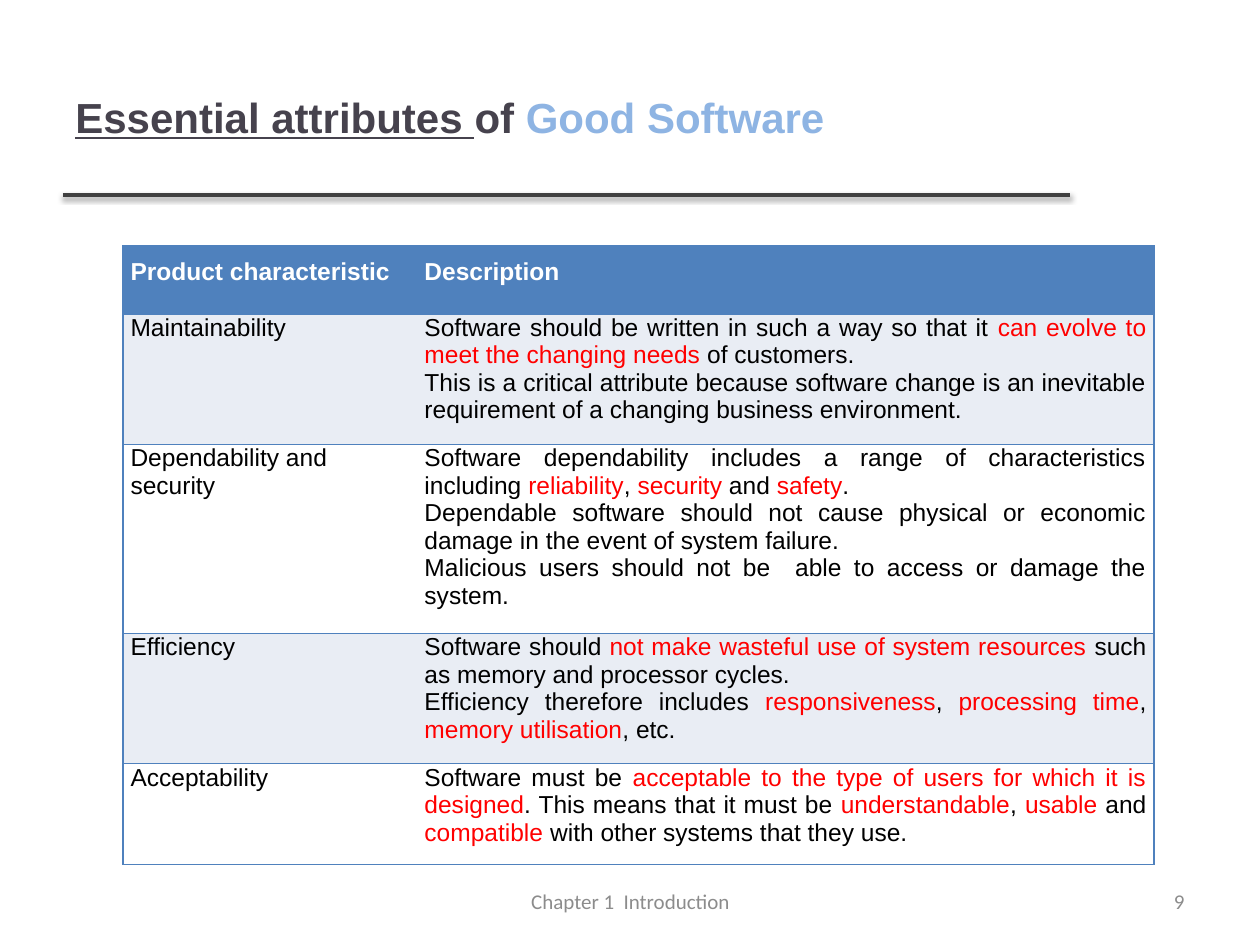
"""Build a slide that tabulates the essential attributes of good software."""
from dataclasses import dataclass

from lxml import etree
from pptx import Presentation, util as u
from pptx.dml.color import RGBColor
from pptx.enum import shapes, text
from pptx.oxml import ns

PX = 914400 // 126
BLUE, BAND, WHITE, BLACK, RED = "4F81BD", "E9EDF4", "FFFFFF", "000000", "FF0000"
INK, SKY, GREY, RULE = "46424D", "8EB4E3", "8C8C8C", "404040"
LEFT, CENTER, RIGHT, JUSTIFY = (text.PP_ALIGN.LEFT, text.PP_ALIGN.CENTER,
                                text.PP_ALIGN.RIGHT, text.PP_ALIGN.JUSTIFY)
BODY = {"name": "Arial", "size": u.Pt(14), "bold": False}
HEADER = {**BODY, "bold": True}
TITLE = {"name": "Arial", "size": u.Pt(24), "bold": True}
FOOTER = {"name": "Calibri", "size": u.Pt(12)}


@dataclass
class Label:
    """A text box made of (words, colour, underline) runs, placed in px."""
    box: tuple[int, int, int, int]
    runs: list[tuple[str, str, bool]]
    font: dict
    align: text.PP_ALIGN


@dataclass
class Attribute:
    """A table row; asterisks enclose the red words of its description."""
    name: str
    description: list[str]
    height: int
    name_align: text.PP_ALIGN = JUSTIFY


LABELS = [
    Label((63, 38, 1006, 157), [("Essential attributes ", INK, True), ("of ", INK, False),
                                ("Good Software", SKY, False)], TITLE, LEFT),
    Label((431, 876, 399, 50), [("Chapter 1  Introduction", GREY, False)], FOOTER, CENTER),
    Label((903, 876, 294, 50), [("9", GREY, False)], FOOTER, RIGHT),
]
ROWS = [
    Attribute("Product characteristic", ["Description"], 68),
    Attribute("Maintainability", [
        "Software should be written in such a way so that it "
        "*can evolve to meet the changing needs* of customers. ",
        "This is a critical attribute because software change is an inevitable "
        "requirement of a changing business environment."], 118),
    Attribute("Dependability and security", [
        "Software dependability includes a range of characteristics including "
        "*reliability*, *security* and *safety*. ",
        "Dependable software should not cause physical or economic damage "
        "in the event of system failure. ",
        "Malicious users should not be  able to access or damage the system."], 144, LEFT),
    Attribute("Efficiency", [
        "Software should *not make wasteful use of system resources *"
        "such as memory and processor cycles. ",
        "Efficiency therefore includes *responsiveness*, *processing time*, "
        "*memory utilisation*, etc."], 118),
    Attribute("Acceptability", [
        "Software must be *acceptable to the type of users for which it is designed*. "
        "This means that it must be *understandable*, *usable* and *compatible* "
        "with other systems that they use. "], 93),
]
COLUMNS = [294, 737]


def rgb(value: str) -> RGBColor:
    """Turn a hex string into a colour."""
    return RGBColor.from_string(value)


def apply(target, values: dict) -> None:
    """Set every attribute named in the dict."""
    for key, value in values.items():
        setattr(target, key, value)


def add_run(p, words: str, color: str, font: dict) -> None:
    """Append one formatted run to a paragraph."""
    r = p.add_run()
    r.text = words
    apply(r.font, font)
    r.font.color.rgb = rgb(color)


def add_label(s, label: Label) -> None:
    """Draw a text box with its runs on one line."""
    tf = s.shapes.add_textbox(*(v * PX for v in label.box)).text_frame
    apply(tf, {"word_wrap": True, "vertical_anchor": text.MSO_ANCHOR.MIDDLE})
    p = tf.paragraphs[0]
    p.alignment = label.align
    for words, color, underline in label.runs:
        add_run(p, words, color, {**label.font, "underline": underline})


def add_rule(s, x1: int, x2: int, y: int) -> None:
    """Draw the shadowed rule below the title."""
    sp = s.shapes.add_connector(shapes.MSO_CONNECTOR.STRAIGHT, x1 * PX, y * PX, x2 * PX, y * PX)
    sp.line.width = u.Pt(2)
    sp.line.color.rgb = rgb(RULE)
    effects = etree.SubElement(sp._element.spPr, ns.qn("a:effectLst"))
    shadow = etree.SubElement(effects, ns.qn("a:outerShdw"), blurRad=str(u.Pt(3.1)),
                              dist=str(u.Pt(1.6)), dir="5400000", rotWithShape="0")
    color = etree.SubElement(shadow, ns.qn("a:srgbClr"), val=BLACK)
    etree.SubElement(color, ns.qn("a:alpha"), val="38000")


def set_borders(cell, sides: str) -> None:
    """Draw blue borders on the named sides and none on the others."""
    props = cell._tc.get_or_add_tcPr()
    for side in "LRTB":
        line = etree.SubElement(props, ns.qn(f"a:ln{side}"), w=str(u.Pt(1)))
        if side in sides:
            fill = etree.SubElement(line, ns.qn("a:solidFill"))
            etree.SubElement(fill, ns.qn("a:srgbClr"), val=BLUE)
        else:
            etree.SubElement(line, ns.qn("a:noFill"))


def fill_cell(cell, lines: list[str], align: text.PP_ALIGN, row: int, sides: str) -> None:
    """Format one cell and write its paragraphs."""
    header = row == 0
    set_borders(cell, sides)
    cell.fill.solid()
    cell.fill.fore_color.rgb = rgb(BLUE if header else BAND if row % 2 else WHITE)
    apply(cell, {"margin_left": u.Inches(0.06), "margin_right": u.Inches(0.06),
                 "margin_top": u.Inches(0.1 if header else 0), "margin_bottom": u.Inches(0.1)})
    tf = cell.text_frame
    for i, line in enumerate(lines):
        p = tf.add_paragraph() if i else tf.paragraphs[0]
        p.alignment = align
        for j, words in enumerate(line.split("*")):
            if words:
                color = RED if j % 2 else WHITE if header else BLACK
                add_run(p, words, color, HEADER if header else BODY)


def add_attributes(s, left: int, top: int) -> None:
    """Draw the table of attributes."""
    height = sum(row.height for row in ROWS)
    table = s.shapes.add_table(len(ROWS), len(COLUMNS), left * PX, top * PX,
                               sum(COLUMNS) * PX, height * PX).table
    for column, width in zip(table.columns, COLUMNS):
        column.width = width * PX
    for i, row in enumerate(ROWS):
        table.rows[i].height = row.height * PX
        fill_cell(table.cell(i, 0), [row.name], row.name_align, i, "LTB")
        fill_cell(table.cell(i, 1), row.description, JUSTIFY, i, "RTB")


def main() -> None:
    """Build and save the slide."""
    prs = Presentation()
    apply(prs, {"slide_width": u.Inches(10), "slide_height": u.Inches(7.5)})
    s = prs.slides.add_slide(prs.slide_layouts[6])
    add_rule(s, 63, 1070, 195)
    for label in LABELS:
        add_label(s, label)
    add_attributes(s, 123, 246)
    prs.save("out.pptx")


if __name__ == "__main__":
    main()
